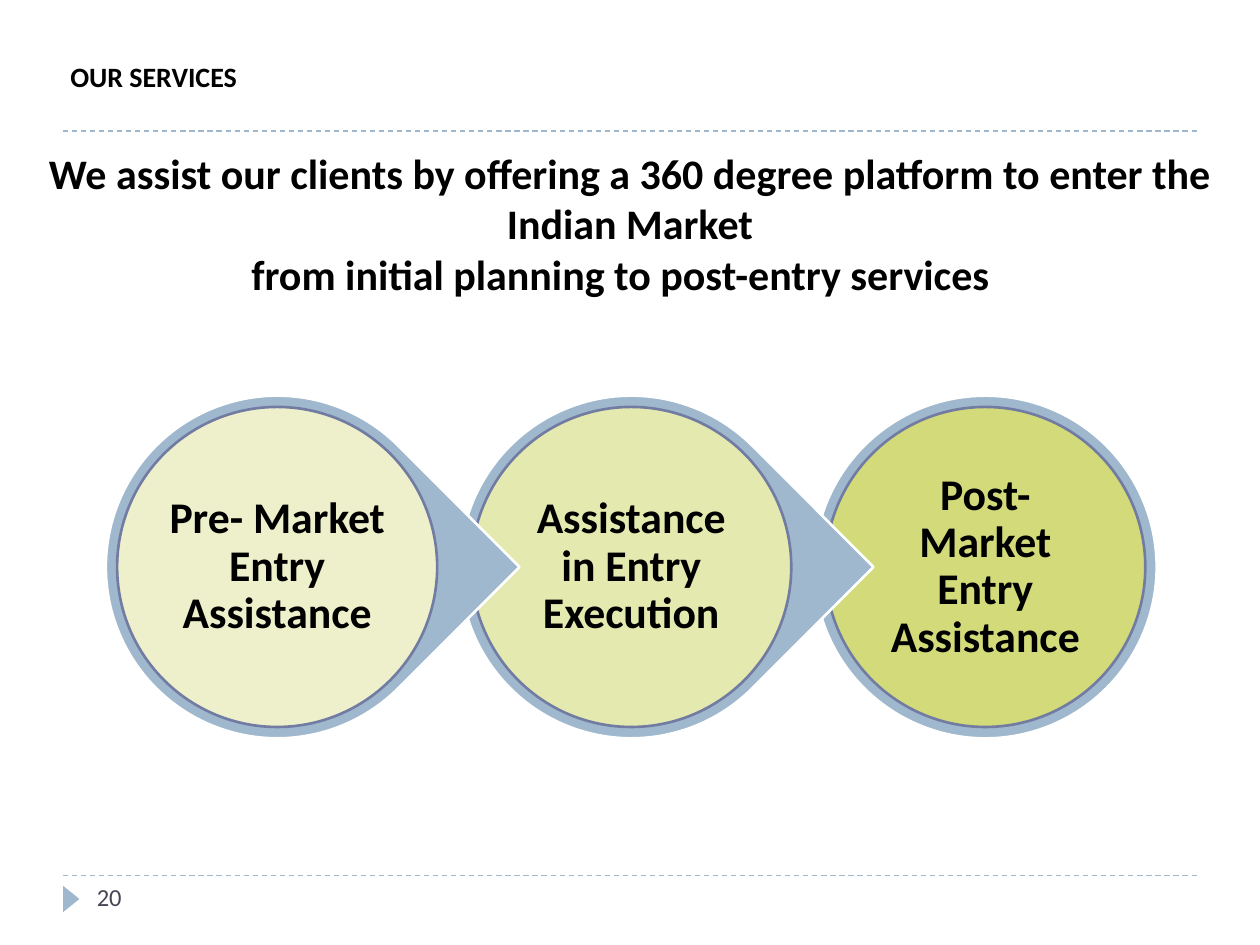
from lxml.etree import SubElement
from pptx import Presentation
from pptx.dml.color import RGBColor
from pptx.enum.dml import MSO_LINE
from pptx.enum.shapes import MSO_CONNECTOR, MSO_SHAPE
from pptx.enum.text import MSO_ANCHOR, PP_ALIGN
from pptx.oxml.ns import qn
from pptx.util import Inches, Pt

COLORS = {
    "blue": "9FB8CD", "outline": "727CA3", "white": "FFFFFF",
    "black": "000000", "gray": "464653",
    "pre": "EDF0CA", "entry": "E4E9AF", "post": "D2DA7A",
}


def add_text(left, top, width, height, lines, size, color="black", bold=True,
             align=PP_ALIGN.LEFT, anchor=MSO_ANCHOR.TOP):
    frame = slide.shapes.add_textbox(
        Inches(left), Inches(top), Inches(width), Inches(height)).text_frame
    frame.word_wrap = True
    frame.vertical_anchor = anchor
    frame.text = "\n".join(lines)
    for paragraph in frame.paragraphs:
        paragraph.alignment = align
        for run in paragraph.runs:
            run.font.name = "Calibri"
            run.font.size = Pt(size)
            run.font.bold = bold
            run.font.color.rgb = RGBColor.from_string(COLORS[color])
    return frame


def add_filled(kind, left, top, width, height, fill, line=None):
    shape = slide.shapes.add_shape(
        kind, Inches(left), Inches(top), Inches(width), Inches(height))
    shape.shadow.inherit = False
    shape.fill.solid()
    shape.fill.fore_color.rgb = RGBColor.from_string(COLORS[fill])
    if line:
        shape.line.color.rgb = RGBColor.from_string(COLORS[line])
        shape.line.width = Pt(1.5)
    else:
        shape.line.fill.background()
    return shape


prs = Presentation()
prs.slide_width, prs.slide_height = Inches(10), Inches(7.5)
slide = prs.slides.add_slide(prs.slide_layouts[6])

# Dashed rules above the footer and below the title
for rule_y in (6.95, 1.04):
    rule = slide.shapes.add_connector(
        MSO_CONNECTOR.STRAIGHT, Inches(0.5), Inches(rule_y), Inches(9.5), Inches(rule_y))
    rule.line.color.rgb = RGBColor.from_string(COLORS["blue"])
    rule.line.width = Pt(0.75)
    rule.line.dash_style = MSO_LINE.DASH
    SubElement(rule._element.spPr, qn("a:effectLst"))

# Page marker and number
marker = add_filled(MSO_SHAPE.ISOSCELES_TRIANGLE, 0.46, 7.07, 0.21, 0.13, "blue")
marker.rotation = 90
add_text(0.67, 6.95, 2.17, 0.4, ["20"], 14, color="gray", bold=False)

# Title
title = add_text(0.46, 0.03, 8.77, 1.08, ["OUR SERVICES"], 16, anchor=MSO_ANCHOR.MIDDLE)
title_line = title.paragraphs[0]
title_line.line_spacing = Pt(24)
title_props = title_line._p.get_or_add_pPr()
title_props.set("marL", str(Inches(0.2)))
title_props.set("indent", str(Inches(-0.2)))

# Introduction, its last line set slightly left of centre
intro = add_text(
    0.22, 1.12, 9.56, 1.31,
    ["We assist our clients by offering a 360 degree platform to enter the Indian Market",
     "from initial planning to post-entry services"],
    24, align=PP_ALIGN.CENTER)
intro.paragraphs[1]._p.get_or_add_pPr().set("marR", str(Inches(0.15)))

# Service stages, last one first so that each drop points over the next
stages = [
    ("Pre- Market Entry Assistance", "pre"),
    ("Assistance in Entry Execution", "entry"),
    ("Post- Market Entry Assistance", "post"),
]
RING, DISC, LABEL = 2.72, 2.54, 1.81
STAGE_Y, FIRST_X, STEP = 4.5, 2.2, 2.81

for index, (service, fill) in reversed(list(enumerate(stages))):
    center_x = FIRST_X + index * STEP
    is_last = index == len(stages) - 1
    ring = add_filled(
        MSO_SHAPE.OVAL if is_last else MSO_SHAPE.TEAR,
        center_x - RING / 2, STAGE_Y - RING / 2, RING, RING, "blue", "white")
    if not is_last:
        ring.rotation = 45
        ring.adjustments[0] = 1
    add_filled(MSO_SHAPE.OVAL, center_x - DISC / 2, STAGE_Y - DISC / 2,
               DISC, DISC, fill, "outline")
    label = add_text(center_x - LABEL / 2, STAGE_Y - LABEL / 2, LABEL, LABEL,
                     [service], 25, align=PP_ALIGN.CENTER, anchor=MSO_ANCHOR.MIDDLE)
    label.margin_left = label.margin_right = Inches(0.03)
    label.margin_top = label.margin_bottom = Inches(0.03)
    label.paragraphs[0].line_spacing = 0.9

prs.save("out.pptx")
